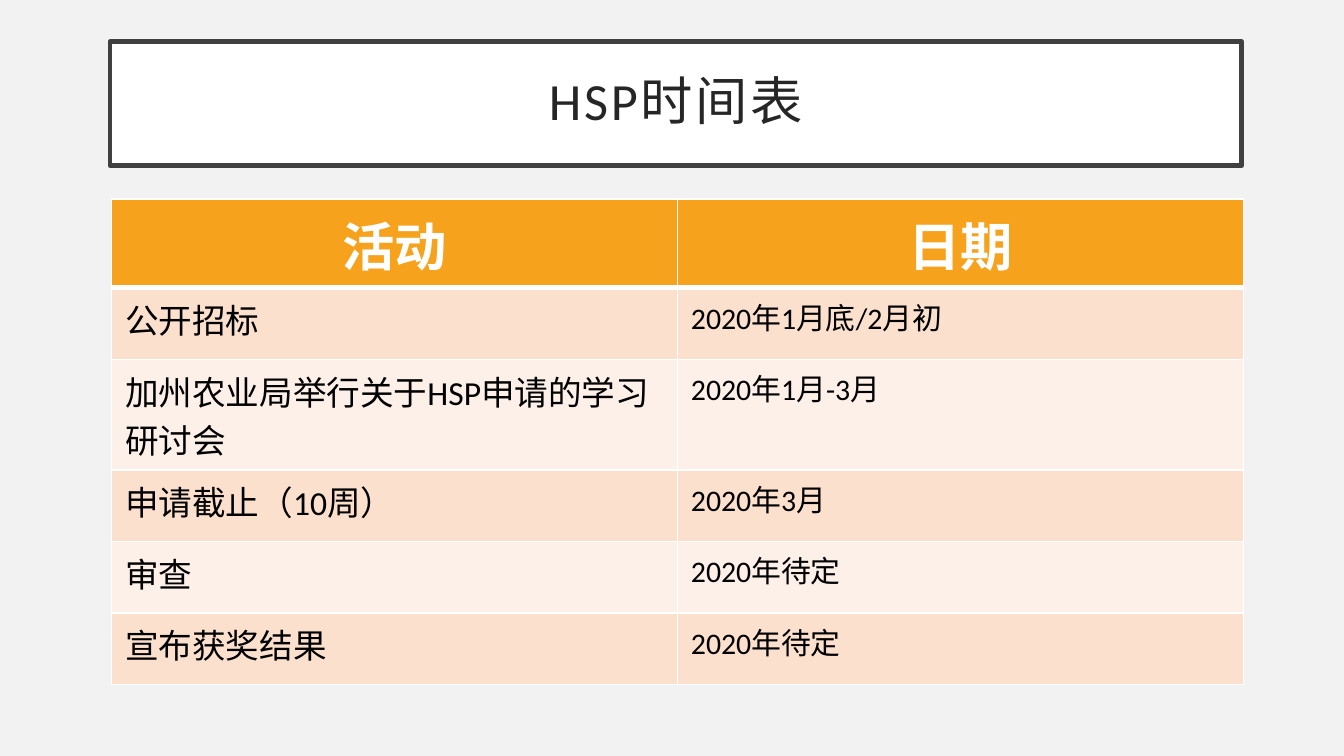
from lxml.etree import SubElement
from pptx import Presentation
from pptx.dml.color import RGBColor
from pptx.enum.text import MSO_ANCHOR, MSO_AUTO_SIZE, PP_ALIGN
from pptx.oxml.ns import qn
from pptx.util import Cm, Pt

WHITE = RGBColor(0xFF, 0xFF, 0xFF)
BLACK = RGBColor(0, 0, 0)
INK = RGBColor(0x26, 0x26, 0x26)
FRAME = RGBColor(0x40, 0x40, 0x40)
PAPER = RGBColor(0xF2, 0xF2, 0xF2)
ORANGE = RGBColor(0xF6, 0xA2, 0x1D)
BANDS = [RGBColor(0xFD, 0xF0, 0xE8), RGBColor(0xFB, 0xE0, 0xCD)]

TITLE = "HSP时间表"
HEAD = ("活动", "日期")
PLAN = [
    ("公开招标", "2020年1月底/2月初"),
    ("加州农业局举行关于HSP申请的学习研讨会", "2020年1月-3月"),
    ("申请截止（10周）", "2020年3月"),
    ("审查", "2020年待定"),
    ("宣布获奖结果", "2020年待定"),
]
SIZES = (18, 16)
WIDTH = 21.39
ROW, TALL = 1.35, 1.63


def write(frame, text, size=18, color=BLACK, bold=False, align=PP_ALIGN.LEFT,
          lead=None, track=None):
    para = frame.paragraphs[0]
    para.alignment = align
    if lead:
        para.line_spacing = lead
    run = para.add_run()
    run.text = text
    font = run.font
    font.name, font.size, font.bold = "Calibri", Pt(size), bold
    font.color.rgb = color
    if track:
        font._element.set("spc", str(int(track * 100)))


def border(cell, **widths):
    props = cell._tc.get_or_add_tcPr()
    for side, width in widths.items():
        line = SubElement(props, qn("a:ln" + side), w=str(Pt(width)))
        fill = SubElement(line, qn("a:solidFill"))
        SubElement(fill, qn("a:srgbClr"), val=str(WHITE))


def add_title(slide):
    box = slide.shapes.title
    box.left, box.top, box.width, box.height = Cm(2.08), Cm(0.79), Cm(WIDTH), Cm(2.34)
    box.fill.solid()
    box.fill.fore_color.rgb = WHITE
    box.line.color.rgb = FRAME
    box.line.width = Pt(2.5)
    frame = box.text_frame
    frame.word_wrap = True
    frame.auto_size = MSO_AUTO_SIZE.NONE
    frame.vertical_anchor = MSO_ANCHOR.MIDDLE
    frame.margin_left = frame.margin_right = Cm(0.51)
    frame.margin_top = frame.margin_bottom = Cm(0.51)
    write(frame, TITLE, size=28, color=INK, align=PP_ALIGN.CENTER, lead=0.9, track=1.5)


def add_plan(slide):
    rows = [HEAD] + PLAN
    high = ROW * (len(rows) - 1) + TALL
    table = slide.shapes.add_table(len(rows), len(HEAD), Cm(2.11), Cm(3.76),
                                   Cm(WIDTH), Cm(high)).table
    for col in table.columns:
        col.width = Cm(WIDTH / len(HEAD))
    for r, row in enumerate(rows):
        table.rows[r].height = Cm(TALL if r == 2 else ROW)
        for c, text in enumerate(row):
            cell = table.cell(r, c)
            border(cell, L=1, R=1, T=3 if r == 1 else 1, B=1 if r else 3)
            cell.fill.solid()
            cell.fill.fore_color.rgb = BANDS[r % 2] if r else ORANGE
            if r:
                write(cell.text_frame, text, size=SIZES[c])
            else:
                write(cell.text_frame, text, size=28, color=WHITE, bold=True,
                      align=PP_ALIGN.CENTER)


def main():
    deck = Presentation()
    deck.slide_width, deck.slide_height = Cm(25.4), Cm(14.29)
    slide = deck.slides.add_slide(deck.slide_layouts[5])
    slide.background.fill.solid()
    slide.background.fill.fore_color.rgb = PAPER
    add_title(slide)
    add_plan(slide)
    deck.save("out.pptx")


if __name__ == "__main__":
    main()
